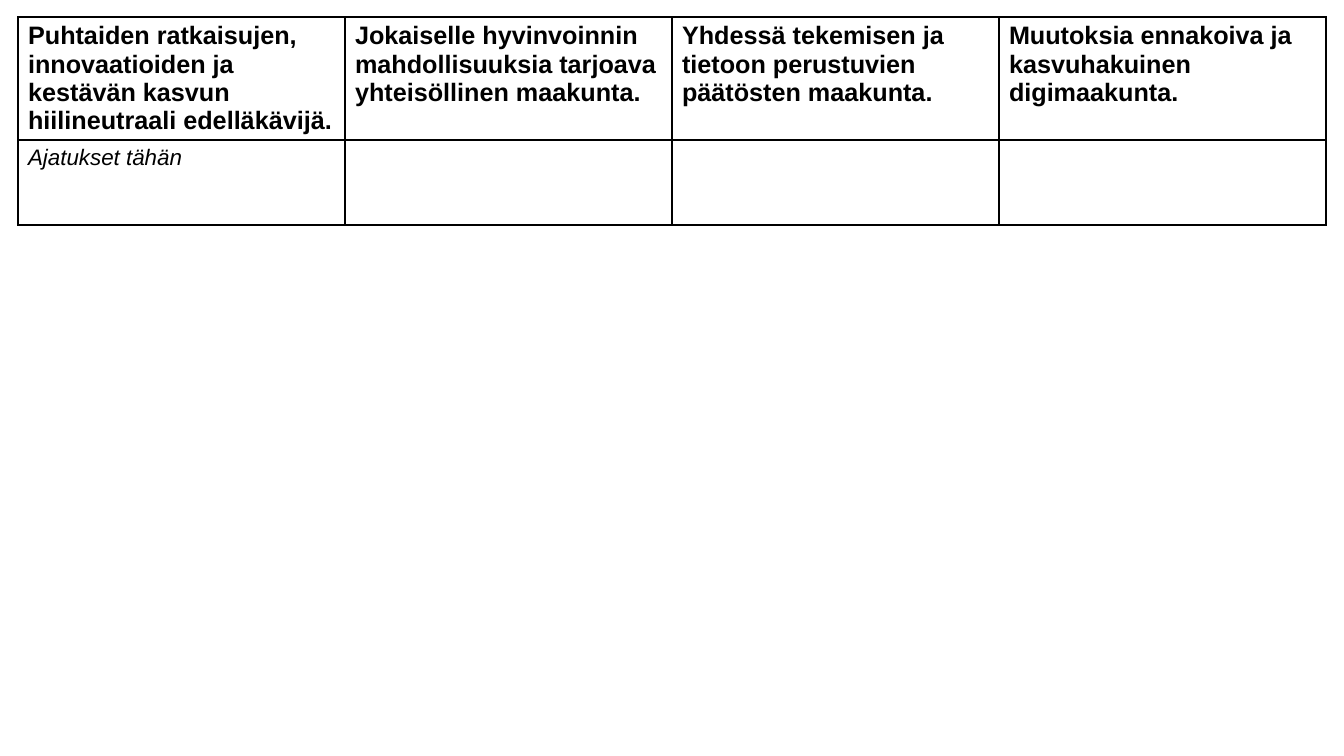
from pptx import Presentation
from pptx.dml.color import RGBColor
from pptx.oxml import parse_xml
from pptx.oxml.ns import nsdecls
from pptx.util import Pt

PX = 9071  # EMU per px at 100.8 px to the inch
BLACK = RGBColor(0, 0, 0)
COLUMN_WIDTH = 327
ROW_HEIGHTS = [123, 85]
HEADING = {"size": Pt(18), "bold": True, "italic": False}
PROMPT = {"size": Pt(16), "bold": False, "italic": True}

ROWS = [
    (HEADING, [
        "Puhtaiden ratkaisujen, innovaatioiden ja kestävän kasvun hiilineutraali edelläkävijä.",
        "Jokaiselle hyvinvoinnin mahdollisuuksia tarjoava yhteisöllinen maakunta.",
        "Yhdessä tekemisen ja tietoon perustuvien päätösten maakunta.",
        "Muutoksia ennakoiva ja kasvuhakuinen digimaakunta.",
    ]),
    (PROMPT, ["Ajatukset tähän", "", "", ""]),
]


def add_borders(cell):
    properties = cell._tc.get_or_add_tcPr()
    for position, side in enumerate(("lnL", "lnR", "lnT", "lnB")):
        properties.insert(position, parse_xml(
            f'<a:{side} {nsdecls("a")} w="{Pt(1)}"><a:solidFill>'
            f'<a:srgbClr val="{BLACK}"/></a:solidFill></a:{side}>'))


prs = Presentation()
prs.slide_width = 1344 * PX
prs.slide_height = 756 * PX
slide = prs.slides.add_slide(prs.slide_layouts[6])

strategy = slide.shapes.add_table(
    2, 4, 18 * PX, 17 * PX, 4 * COLUMN_WIDTH * PX, sum(ROW_HEIGHTS) * PX).table
strategy.first_row = False
strategy.horz_banding = False

for column in strategy.columns:
    column.width = COLUMN_WIDTH * PX

for row, height, (style, wordings) in zip(strategy.rows, ROW_HEIGHTS, ROWS):
    row.height = height * PX
    for cell, wording in zip(row.cells, wordings):
        cell.fill.background()
        add_borders(cell)
        if wording:
            run = cell.text_frame.paragraphs[0].add_run()
            run.text = wording
            run.font.name = "Arial"
            run.font.color.rgb = BLACK
            for attribute, value in style.items():
                setattr(run.font, attribute, value)

prs.save("out.pptx")
